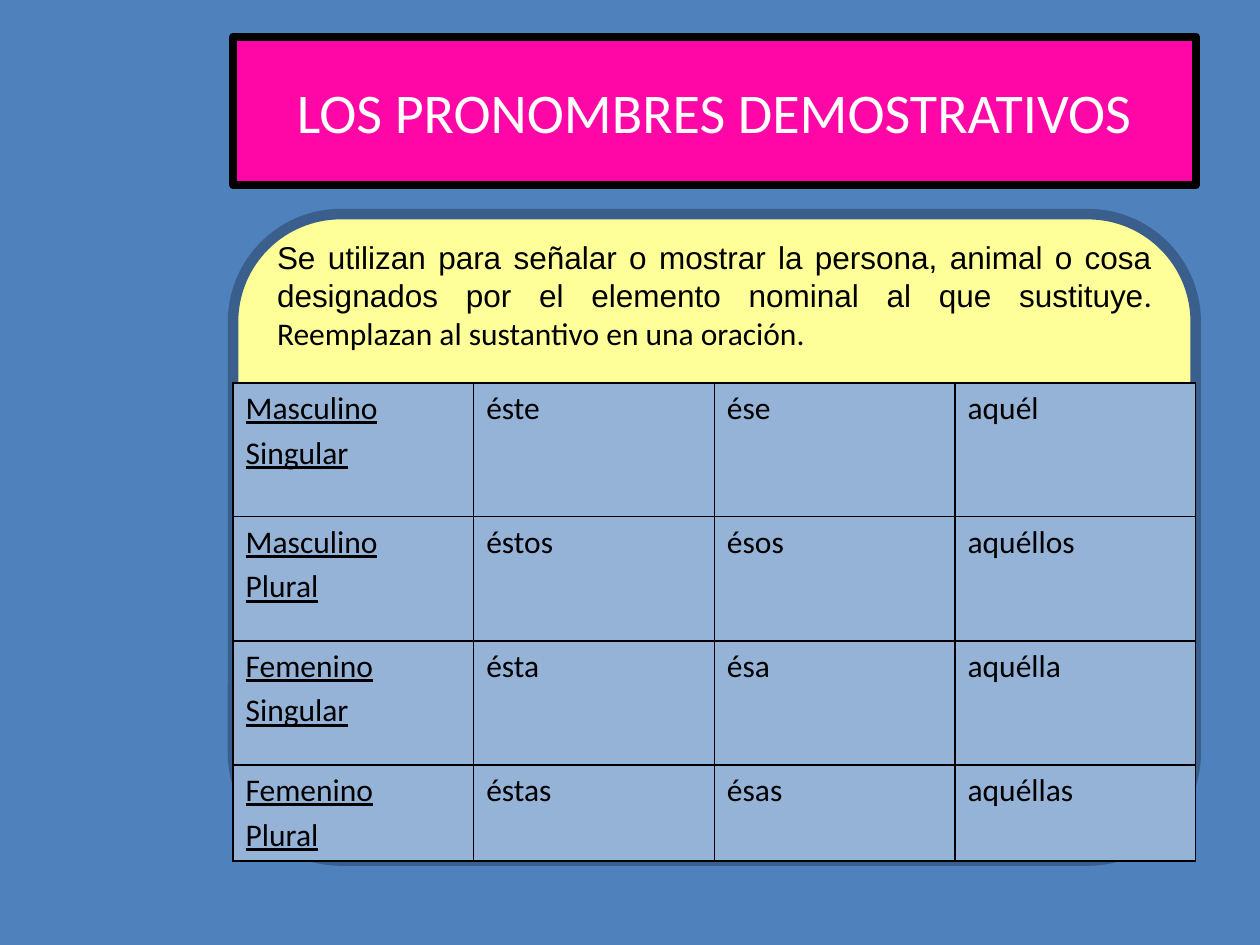
import pptx
import pptx.dml.color
import pptx.enum.shapes
import pptx.enum.text
import pptx.oxml.ns
import pptx.util
from dataclasses import dataclass
from lxml import etree


@dataclass(frozen=True)
class Theme:
    back: str = "4F81BD"
    pink: str = "FF06A7"
    cream: str = "FFFF99"
    navy: str = "3A5F8C"
    cell: str = "95B3D7"
    black: str = "000000"
    white: str = "FFFFFF"
    sans: str = "Calibri"
    alt: str = "Arial"
    head: int = 32
    text: int = 18


THEME = Theme()
WIDE, HIGH = pptx.util.Inches(10), pptx.util.Inches(7.5)
ALIGN = pptx.enum.text.PP_ALIGN
MIDDLE = pptx.enum.text.MSO_ANCHOR.MIDDLE
ROWS = [
    ("Masculino\nSingular", "éste", "ése", "aquél"),
    ("Masculino\nPlural", "éstos", "ésos", "aquéllos"),
    ("Femenino\nSingular", "ésta", "ésa", "aquélla"),
    ("Femenino\nPlural", "éstas", "ésas", "aquéllas"),
]
SHARES = (0.28, 0.26, 0.26, 0.2)  # row heights


def rgb(code):
    return pptx.dml.color.RGBColor.from_string(code)


def place(shape, box):
    shape.left, shape.top, shape.width, shape.height = box


def paint(shape, fill, line, width):
    shape.fill.solid()
    shape.fill.fore_color.rgb = rgb(fill)
    shape.line.color.rgb = rgb(line)
    shape.line.width = pptx.util.Pt(width)


def style(font, size, color, name=THEME.sans):
    font.size, font.name = pptx.util.Pt(size), name
    font.color.rgb = rgb(color)


def banner(slide, box):
    """Title placeholder with a rounded outline."""
    title = slide.shapes.title
    place(title, box)
    geom = etree.SubElement(title.element.spPr,
                            pptx.oxml.ns.qn("a:prstGeom"), prst="roundRect")
    etree.SubElement(geom, pptx.oxml.ns.qn("a:avLst"))
    paint(title, THEME.pink, THEME.black, 4.5)
    frame = title.text_frame
    frame.text = "LOS PRONOMBRES DEMOSTRATIVOS"
    frame.auto_size = pptx.enum.text.MSO_AUTO_SIZE.NONE
    frame.vertical_anchor = MIDDLE
    para = frame.paragraphs[0]
    para.alignment = ALIGN.CENTER
    style(para.runs[0].font, THEME.head, THEME.white)


def panel(slide, box):
    """Rounded panel with the definition in its upper part."""
    kind = pptx.enum.shapes.MSO_SHAPE.ROUNDED_RECTANGLE
    shape = slide.shapes.add_shape(kind, *box)
    shape.shadow.inherit = False
    paint(shape, THEME.cream, THEME.navy, 6)
    frame = shape.text_frame
    frame.word_wrap = True
    frame.vertical_anchor = MIDDLE
    # Keep the text above the table
    frame.margin_top, frame.margin_bottom = 0, int(box[3] * 0.75)
    para = frame.paragraphs[0]
    para.alignment = ALIGN.JUSTIFY
    parts = (
        ("Se utilizan para señalar o mostrar la persona, animal o cosa "
         "designados por el elemento nominal al que sustituye", THEME.alt),
        (". Reemplazan al sustantivo en una oración.", THEME.sans),
    )
    for words, name in parts:
        run = para.add_run()
        run.text = words
        style(run.font, THEME.text, THEME.black, name)


def border(cell):
    props = cell._tc.get_or_add_tcPr()
    for side in ("lnL", "lnR", "lnT", "lnB"):
        line = etree.SubElement(props, pptx.oxml.ns.qn("a:" + side),
                                w=str(pptx.util.Pt(1)))
        fill = etree.SubElement(line, pptx.oxml.ns.qn("a:solidFill"))
        etree.SubElement(fill, pptx.oxml.ns.qn("a:srgbClr"), val=THEME.black)


def grid(slide, box):
    """Table of pronouns by gender and number."""
    table = slide.shapes.add_table(len(ROWS), len(ROWS[0]), *box).table
    table.first_row = table.horz_banding = False
    for row, share in zip(table.rows, SHARES):
        row.height = int(box[3] * share)
    for i, words in enumerate(ROWS):
        for j, word in enumerate(words):
            cell = table.cell(i, j)
            border(cell)
            cell.fill.solid()
            cell.fill.fore_color.rgb = rgb(THEME.cell)
            cell.text_frame.text = word
            for k, para in enumerate(cell.text_frame.paragraphs):
                if k:
                    para.space_before = pptx.util.Pt(THEME.text * 0.2)
                font = para.runs[0].font
                style(font, THEME.text, THEME.black)
                font.underline = j == 0


def main():
    deck = pptx.Presentation()
    deck.slide_width, deck.slide_height = WIDE, HIGH
    slide = deck.slides.add_slide(deck.slide_layouts[5])
    slide.background.fill.solid()
    slide.background.fill.fore_color.rgb = rgb(THEME.back)

    # One column holds all three regions
    left, width = int(WIDE * 0.185), int(WIDE * 0.764)
    regions = (
        (banner, 0.29, 1.18),
        (panel, 1.7, 5.13),
        (grid, 3.04, 3.79),
    )
    for draw, top, height in regions:
        draw(slide, (left, int(HIGH * top / 7.5), width,
                     int(HIGH * height / 7.5)))
    deck.save("out.pptx")


if __name__ == "__main__":
    main()
